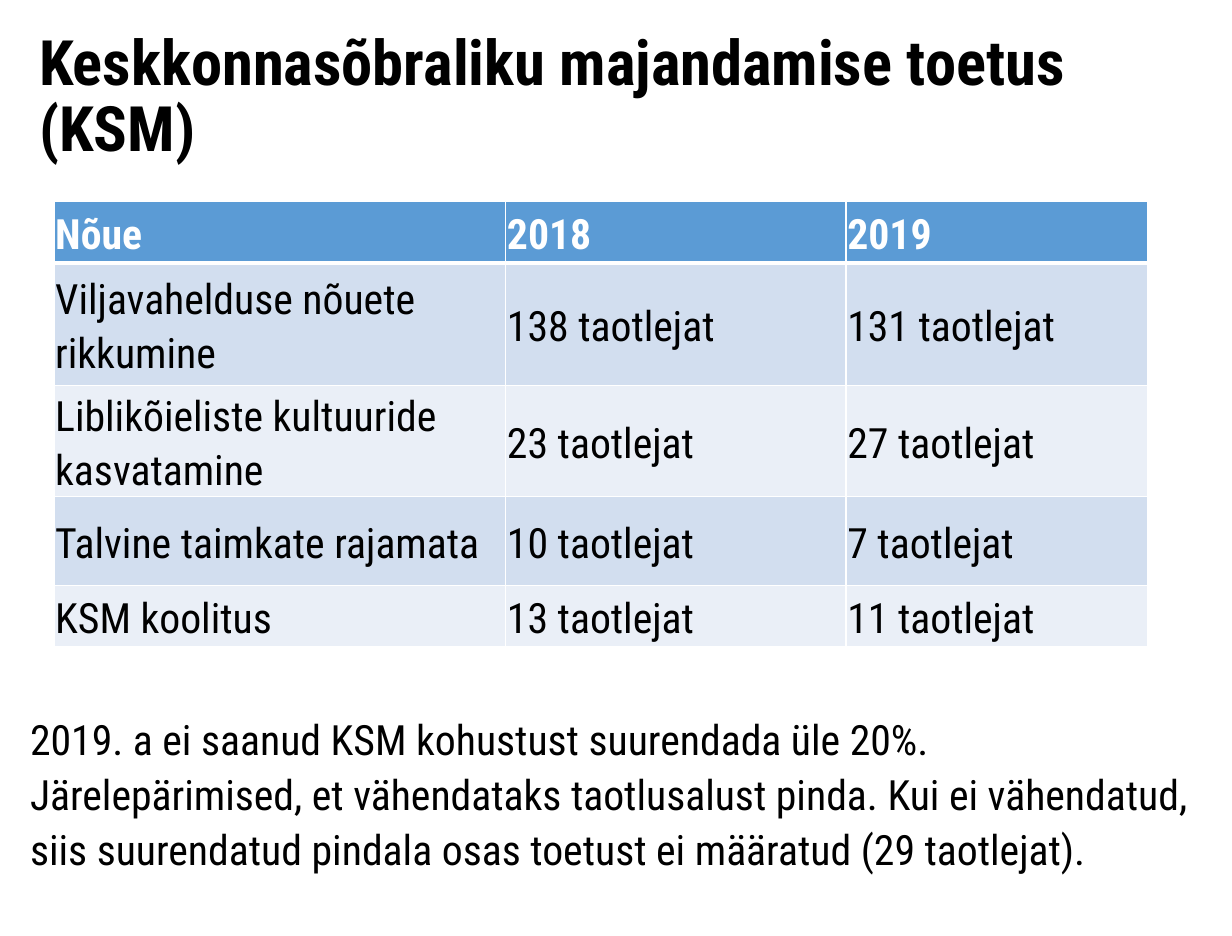
from dataclasses import dataclass

from lxml.etree import SubElement
from pptx import Presentation
from pptx.dml.color import RGBColor as RGB
from pptx.enum.text import MSO_ANCHOR as ANCHOR, MSO_AUTO_SIZE as AUTOSIZE, PP_ALIGN as ALIGN
from pptx.oxml.ns import qn
from pptx.util import Pt


@dataclass(frozen=True)
class Theme:
    font: str = "Roboto Condensed"
    title_size: int = 36
    text_size: int = 24
    text: RGB = RGB(0, 0, 0)
    white: RGB = RGB(255, 255, 255)
    header: RGB = RGB.from_string("5B9BD5")
    bands: tuple = (RGB.from_string("D2DEEF"), RGB.from_string("EAEFF7"))
    rule: int = 1
    header_rule: int = 3


THEME = Theme()

TITLE = "Keskkonnasõbraliku majandamise toetus (KSM)"
ROWS = [
    ("Nõue", "2018", "2019"),
    ("Viljavahelduse nõuete rikkumine", "138 taotlejat", "131 taotlejat"),
    ("Liblikõieliste kultuuride kasvatamine", "23 taotlejat", "27 taotlejat"),
    ("Talvine taimkate rajamata", "10 taotlejat", "7 taotlejat"),
    ("KSM koolitus", "13 taotlejat", "11 taotlejat"),
]
COL_SHARES = (3.61, 2.72, 2.41)
ROW_SHARES = (0.49, 0.98, 0.89, 0.71, 0.49)
NOTE = ("2019. a ei saanud KSM kohustust suurendada üle 20%. "
        "Järelepärimised, et vähendataks taotlusalust pinda. "
        "Kui ei vähendatud, siis suurendatud pindala osas toetust "
        "ei määratud (29 taotlejat).")


def style_text(p, size, color, spacing, bold=False):
    p.alignment = ALIGN.LEFT
    p.line_spacing = spacing
    for r in p.runs:
        r.font.name = THEME.font
        r.font.size = Pt(size)
        r.font.bold = bold
        r.font.color.rgb = color


def place(sp, box, top_inset=0):
    sp.left, sp.top, sp.width, sp.height = (Pt(v) for v in box)
    tf = sp.text_frame
    tf.word_wrap = True
    tf.auto_size = AUTOSIZE.NONE
    tf.vertical_anchor = ANCHOR.TOP
    tf.margin_left = tf.margin_right = tf.margin_bottom = 0
    tf.margin_top = Pt(top_inset)
    return tf


def add_title(s, box):
    tf = place(s.shapes.title, box, top_inset=4.5)
    tf.text = TITLE
    style_text(tf.paragraphs[0], THEME.title_size, THEME.text, 0.88, bold=True)


def add_note(s, box):
    tf = place(s.placeholders[1], box)
    tf.text = NOTE
    p = tf.paragraphs[0]
    style_text(p, THEME.text_size, THEME.text, 1.1)
    p.space_before = Pt(0)
    p.space_after = Pt(8)
    # No bullet and no hanging indent
    pPr = p._p.get_or_add_pPr()
    pPr.set("marL", "0")
    pPr.set("indent", "0")
    SubElement(pPr, qn("a:buNone"))


def set_borders(cell, top, bottom):
    tcPr = cell._tc.get_or_add_tcPr()
    widths = {"L": THEME.rule, "R": THEME.rule, "T": top, "B": bottom}
    for side, width in widths.items():
        ln = SubElement(tcPr, qn(f"a:ln{side}"), w=str(Pt(width)))
        fill = SubElement(ln, qn("a:solidFill"))
        SubElement(fill, qn("a:srgbClr"), val=str(THEME.white))


def style_cell(cell, row):
    is_header = row == 0
    set_borders(cell,
                top=THEME.header_rule if row == 1 else THEME.rule,
                bottom=THEME.header_rule if is_header else THEME.rule)
    cell.fill.solid()
    cell.fill.fore_color.rgb = THEME.header if is_header else THEME.bands[(row - 1) % 2]
    cell.vertical_anchor = ANCHOR.MIDDLE
    cell.margin_left = cell.margin_right = cell.margin_top = Pt(0.75)
    cell.margin_bottom = 0
    style_text(cell.text_frame.paragraphs[0], THEME.text_size,
               THEME.white if is_header else THEME.text, 1.1, bold=is_header)


def add_requirements_table(s, box):
    x, y, w, h = box
    frame = s.shapes.add_table(len(ROWS), len(COL_SHARES), Pt(x), Pt(y), Pt(w), Pt(h))
    table = frame.table
    for col, share in zip(table.columns, COL_SHARES):
        col.width = Pt(w * share / sum(COL_SHARES))
    for row, share in zip(table.rows, ROW_SHARES):
        row.height = Pt(h * share / sum(ROW_SHARES))
    for i, texts in enumerate(ROWS):
        for j, text in enumerate(texts):
            cell = table.cell(i, j)
            cell.text = text
            style_cell(cell, i)


def build_slide(prs):
    s = prs.slides.add_slide(prs.slide_layouts[1])
    # Heading
    add_title(s, (22.5, 14, 680, 61))
    # Requirements by year
    add_requirements_table(s, (31, 116, 629, 256))
    # Note under the table
    add_note(s, (17.25, 408, 672, 104))


def main():
    prs = Presentation()
    prs.slide_width, prs.slide_height = Pt(708.5), Pt(538.5)
    build_slide(prs)
    prs.save("out.pptx")


if __name__ == "__main__":
    main()
